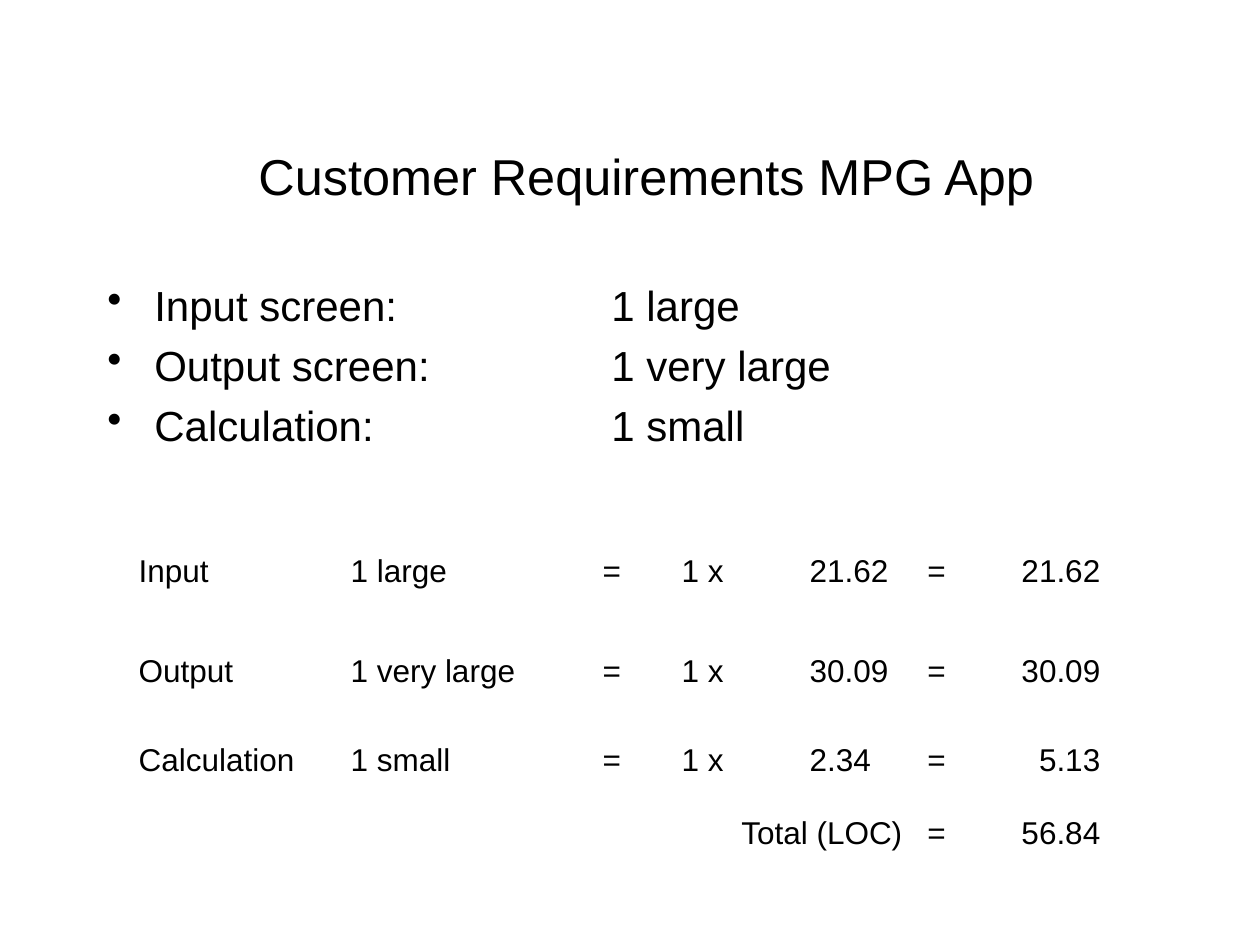
from dataclasses import dataclass

from lxml.etree import SubElement
from pptx import Presentation
from pptx.dml.color import RGBColor
from pptx.enum.text import MSO_ANCHOR, PP_ALIGN
from pptx.oxml.ns import qn
from pptx.util import Pt

EMU_PER_PX = 914400 / 126


@dataclass(frozen=True)
class Theme:
    font: str = "Arial"
    text: RGBColor = RGBColor(0, 0, 0)
    title_size: float = 28.8
    body_size: float = 24
    table_size: float = 18
    body_gap: float = 5.5


THEME = Theme()

REQUIREMENTS = [
    ("Input screen:", "1 large"),
    ("Output screen:", "1 very large"),
    ("Calculation:", "1 small"),
]
ESTIMATES = [
    ["Input", "1 large", "=", "1 x", "21.62", "=", "21.62"],
    ["Output", "1 very large", "=", "1 x", "30.09", "=", "30.09"],
    ["Calculation", "1 small", "=", "1 x", "2.34", "=", "5.13"],
    ["", "", "Total (LOC)", "", "", "=", "56.84"],
]
COLUMN_WIDTHS = [212, 252, 79, 128, 118, 59, 139]
ROW_HEIGHTS = [116, 84, 93, 53]
TOTAL_ROW, TOTAL_FIRST, TOTAL_LAST = 3, 2, 4


def px(length):
    return round(length * EMU_PER_PX)


def style_paragraph(paragraph, size, alignment=PP_ALIGN.LEFT):
    paragraph.alignment = alignment
    paragraph.font.name = THEME.font
    paragraph.font.size = Pt(size)
    paragraph.font.color.rgb = THEME.text


def add_text_frame(slide, left, top, width, height):
    shape = slide.shapes.add_textbox(px(left), px(top), px(width), px(height))
    shape.text_frame.word_wrap = True
    return shape.text_frame


def add_title(slide, text):
    frame = add_text_frame(slide, 135, 137, 1023, 77)
    frame.vertical_anchor = MSO_ANCHOR.MIDDLE
    paragraph = frame.paragraphs[0]
    paragraph.text = text
    style_paragraph(paragraph, THEME.title_size, PP_ALIGN.CENTER)


def format_bullet(paragraph, indent, tab_stops):
    """Give the paragraph a hanging bullet and left tab stops, in px."""
    properties = paragraph._p.get_or_add_pPr()
    properties.set("marL", str(px(indent)))
    properties.set("indent", str(-px(indent)))
    bullet = properties.makeelement(qn("a:buChar"), {"char": "•"})
    tabs = properties.makeelement(qn("a:tabLst"), {})
    for stop in tab_stops:
        SubElement(tabs, qn("a:tab"), pos=str(px(stop)), algn="l")
    default_run = properties.find(qn("a:defRPr"))
    default_run.addprevious(bullet)
    default_run.addprevious(tabs)


def add_requirements(slide, requirements):
    frame = add_text_frame(slide, 95, 273, 1071, 567)
    for index, (name, size) in enumerate(requirements):
        paragraph = frame.add_paragraph() if index else frame.paragraphs[0]
        paragraph.text = f"{name}\t\t{size}"
        paragraph.space_before = Pt(THEME.body_gap)
        style_paragraph(paragraph, THEME.body_size)
        format_bullet(paragraph, indent=47, tab_stops=(378, 504))


def add_estimates(slide, rows):
    table = slide.shapes.add_table(
        len(rows), len(COLUMN_WIDTHS), px(126), px(514),
        px(sum(COLUMN_WIDTHS)), px(sum(ROW_HEIGHTS)),
    ).table
    table.first_row = table.horz_banding = False
    for column, width in zip(table.columns, COLUMN_WIDTHS):
        column.width = px(width)
    for row, height in zip(table.rows, ROW_HEIGHTS):
        row.height = px(height)

    table.cell(TOTAL_ROW, TOTAL_FIRST).merge(table.cell(TOTAL_ROW, TOTAL_LAST))
    right_aligned = len(COLUMN_WIDTHS) - 1
    for row_index, values in enumerate(rows):
        for column_index, value in enumerate(values):
            cell = table.cell(row_index, column_index)
            cell.fill.background()
            cell.vertical_anchor = MSO_ANCHOR.MIDDLE
            paragraph = cell.text_frame.paragraphs[0]
            paragraph.text = value
            is_right = column_index == right_aligned or cell.is_merge_origin
            style_paragraph(paragraph, THEME.table_size,
                            PP_ALIGN.RIGHT if is_right else PP_ALIGN.LEFT)


def main():
    presentation = Presentation()
    presentation.slide_width = px(1260)
    presentation.slide_height = px(945)
    slide = presentation.slides.add_slide(presentation.slide_layouts[6])
    add_title(slide, "Customer Requirements MPG App")
    add_requirements(slide, REQUIREMENTS)
    add_estimates(slide, ESTIMATES)
    presentation.save("out.pptx")


if __name__ == "__main__":
    main()
